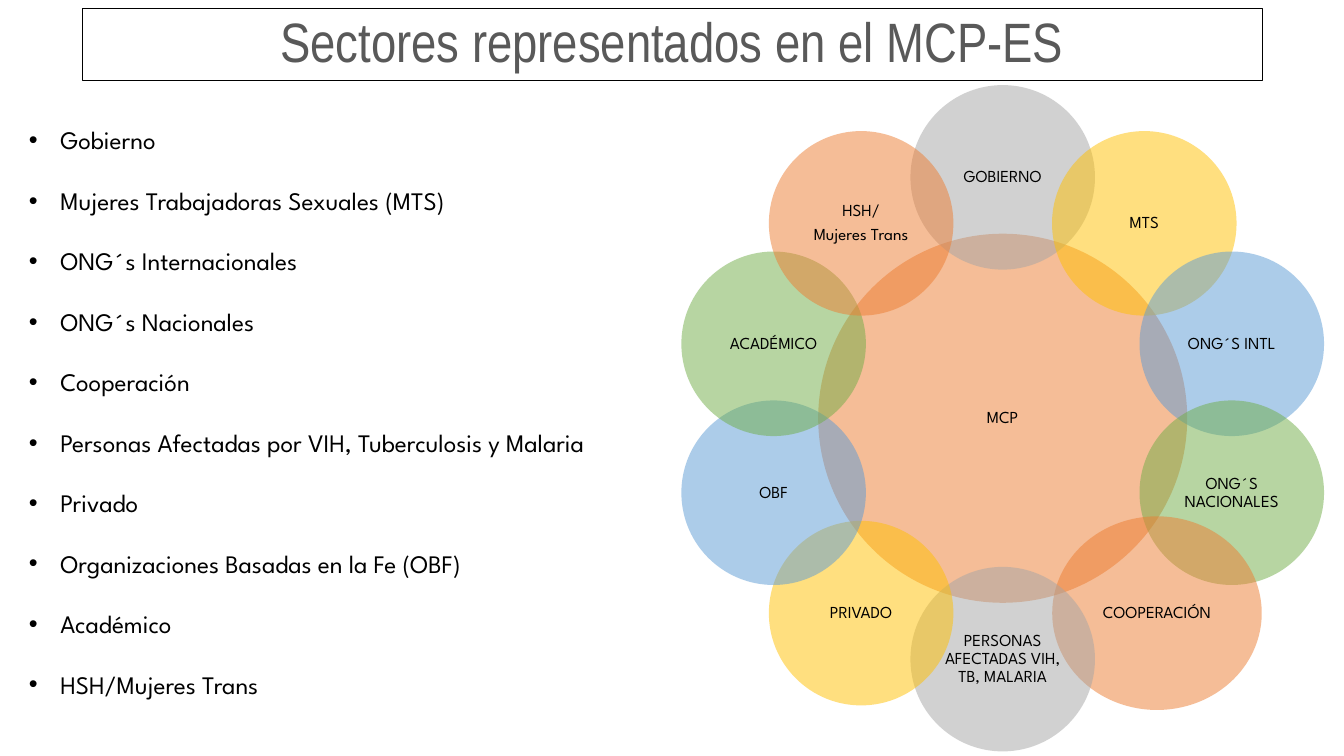
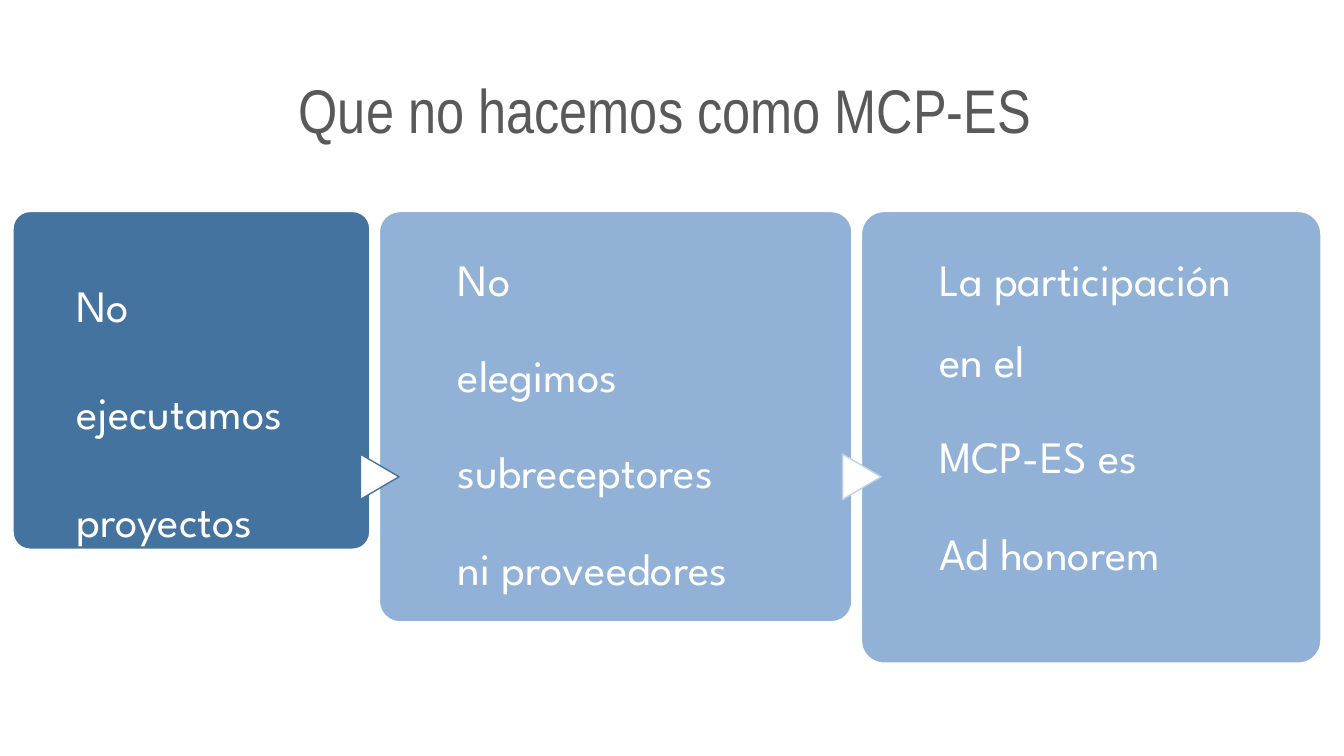
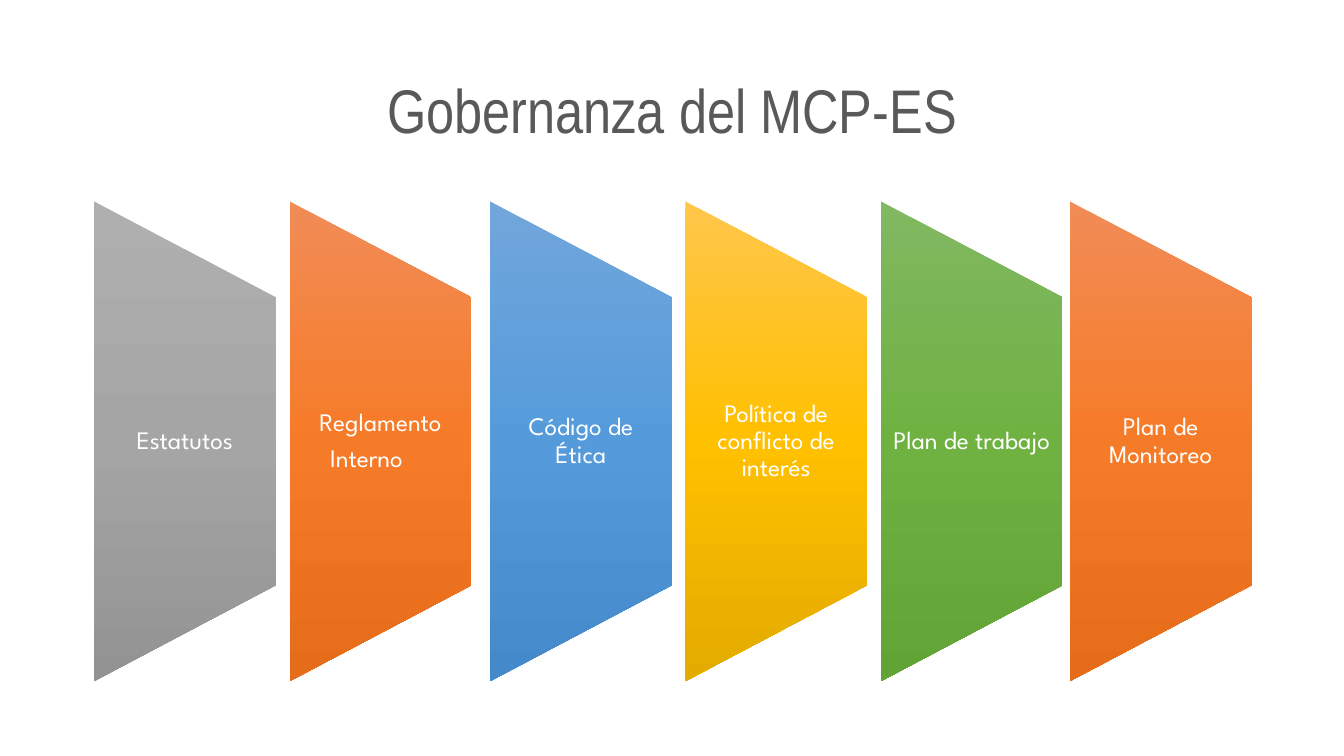
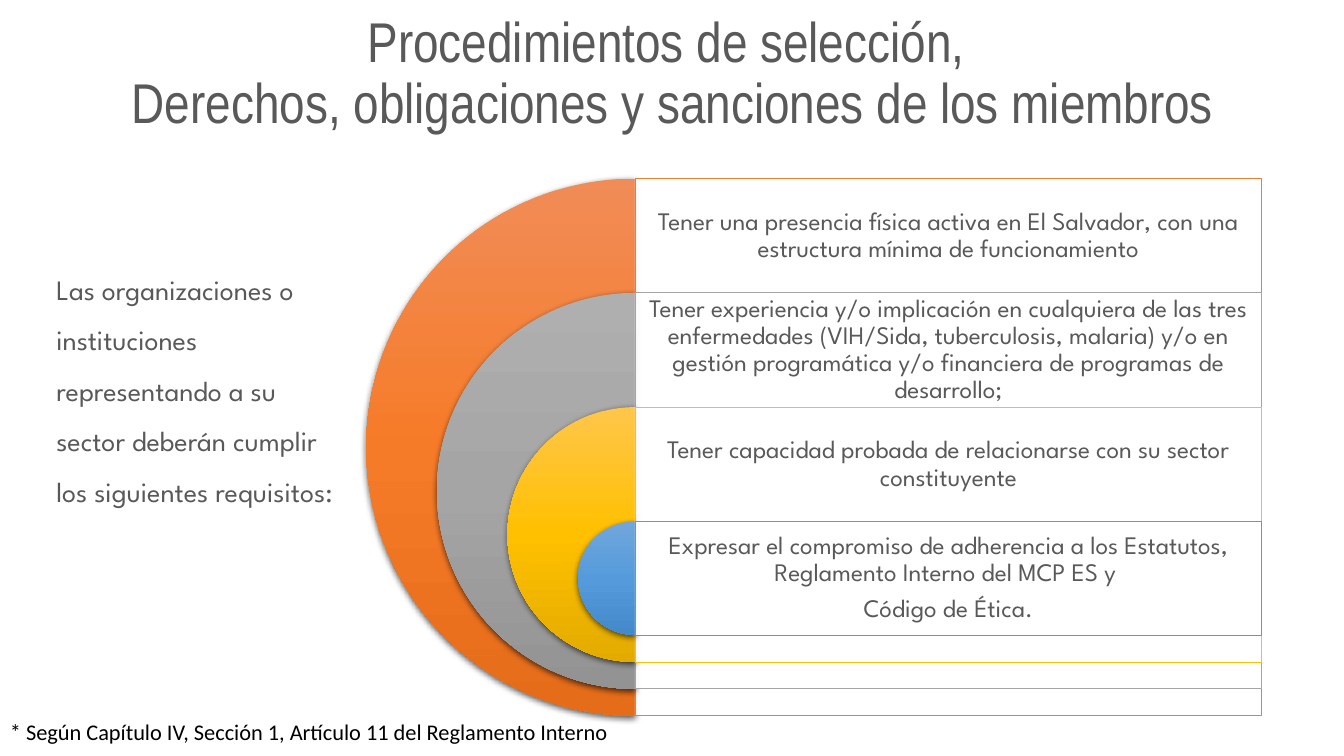
import math
import pptx
import pptx.util
import pptx.dml.color
import pptx.enum.shapes
import pptx.enum.text
import pptx.oxml.ns
from lxml import etree

Cm = pptx.util.Cm
Pt = pptx.util.Pt
qn = pptx.oxml.ns.qn
KIND = pptx.enum.shapes.MSO_SHAPE
ALIGN = pptx.enum.text.PP_ALIGN
ANCHOR = pptx.enum.text.MSO_ANCHOR
FIT = pptx.enum.text.MSO_AUTO_SIZE

COLORS = {
    "black": "000000", "white": "FFFFFF", "text": "595959",
    "orange": "ED7D31", "gray": "A5A5A5", "gold": "FFC000",
    "blue": "5B9BD5", "green": "70AD47",
    "deep": "43739E", "soft": "91B1D6", "pale": "C0D2EA",
}
SHADES = {
    "orange": ("F18C57", "F67B28", "E56C19"),
    "gray": ("AFAFAF", "A5A5A5", "939393"),
    "gold": ("FFC64B", "FFC000", "E3AB00"),
    "blue": ("71A6DB", "559BDB", "448ACA"),
    "green": ("81B861", "6FB242", "62A336"),
}
BODY = "League Spartan"

TITLES = [
    ("Sectores representados en el MCP-ES", (2.06, 0.2, 29.74, 1.83), 39.6),
    ("Que no hacemos como MCP-ES ", (2.34, 1.01, 29.21, 3.68), 44),
    ("Gobernanza del MCP-ES", (2.34, 1.01, 29.21, 3.68), 44),
    ("Procedimientos de selección, \vDerechos, obligaciones y sanciones de los miembros",
     (2.34, 0.05, 29.21, 3.68), 40),
]

SECTORS = [
    "Gobierno", "Mujeres Trabajadoras Sexuales (MTS)", "ONG´s Internacionales",
    "ONG´s Nacionales", "Cooperación",
    "Personas Afectadas por VIH, Tuberculosis y Malaria", "Privado",
    "Organizaciones Basadas en la Fe (OBF)", "Académico", "HSH/Mujeres Trans",
]
PETALS = [
    (["GOBIERNO"], "gray"), (["MTS"], "gold"), (["ONG´S INTL"], "blue"),
    (["ONG´S NACIONALES"], "green"), (["COOPERACIÓN"], "orange"),
    (["PERSONAS AFECTADAS VIH, TB, MALARIA"], "gray"), (["PRIVADO"], "gold"),
    (["OBF"], "blue"), (["ACADÉMICO"], "green"),
    (["HSH/", "Mujeres Trans"], "orange"),
]
WIDE = {4: (0.32, 5.28, 4.88)}

LIMITS = [
    (["No ejecutamos proyectos"], 8.99, 8.51, "deep", 2.0, 1.47, 0.56),
    (["No", "elegimos", "subreceptores", "ni proveedores"],
     11.91, 10.34, "soft", 1.5, 1.83, 0.89),
    (["La participación en el", "MCP-ES es", "Ad honorem"],
     11.58, 11.38, "soft", 1.5, 1.79, 0.83),
]
ARROWS = ["deep", "pale"]

RULES = [
    (["Estatutos"], 2.37, "gray"), (["Reglamento", "Interno\t"], 7.3, "orange"),
    (["Código de Ética"], 12.35, "blue"),
    (["Política de conflicto de interés"], 17.27, "gold"),
    (["Plan de trabajo"], 22.2, "green"), (["Plan de Monitoreo"], 26.96, "orange"),
]

LEAD = ("Las organizaciones o instituciones representando a su sector "
        "deberán cumplir los siguientes requisitos:")
NEEDS = [
    (["Tener una presencia física activa en El Salvador, con una estructura "
      "mínima de funcionamiento"], "orange"),
    (["Tener experiencia y/o implicación en cualquiera de las tres enfermedades "
      "(VIH/Sida, tuberculosis, malaria) y/o en gestión programática y/o "
      "financiera de programas de desarrollo;"], "gray"),
    (["Tener capacidad probada de relacionarse con su sector constituyente"], "gold"),
    (["Expresar el compromiso de adherencia a los Estatutos, Reglamento Interno "
      "del MCP ES y ", "Código de Ética."], "blue"),
]
NOTE = "* Según Capítulo IV, Sección 1, Artículo 11 del Reglamento Interno"


def tint(name):
    return pptx.dml.color.RGBColor.from_string(COLORS[name])


def put(item, values):
    for key, value in values.items():
        setattr(item, key, value)


def pads(left, top, right, bottom):
    return {"margin_left": Cm(left), "margin_top": Cm(top),
            "margin_right": Cm(right), "margin_bottom": Cm(bottom)}


def write(shape, lines, size, color="black", font=BODY, align=ALIGN.CENTER,
          gap=0.9, after=0.35, anchor=ANCHOR.MIDDLE, edges=None):
    frame = shape.text_frame
    put(frame, {"word_wrap": True, "auto_size": FIT.NONE,
                "vertical_anchor": anchor, **(edges or {})})
    for i, line in enumerate(lines):
        para = frame.add_paragraph() if i else frame.paragraphs[0]
        para.text = line
        put(para, {"alignment": align, "line_spacing": gap,
                   "space_before": Pt(0), "space_after": Pt(size * after)})
        for run in para.runs:
            put(run.font, {"size": Pt(size), "name": font})
            run.font.color.rgb = tint(color)


def draw(slide, kind, box, fill=None, alpha=None, shade=None, line=None, width=1):
    shape = slide.shapes.add_shape(kind, *map(Cm, box))
    shape.shadow.inherit = False
    props = shape.element.spPr
    if shade:
        shape.fill.gradient()
        grad = props.find(qn("a:gradFill"))
        grad.clear()
        grad.set("rotWithShape", "0")
        stops = etree.SubElement(grad, qn("a:gsLst"))
        for i, code in enumerate(SHADES[shade]):
            stop = etree.SubElement(stops, qn("a:gs"), pos=str(i * 50000))
            etree.SubElement(stop, qn("a:srgbClr"), val=code)
        etree.SubElement(grad, qn("a:lin"), ang="5400000", scaled="0")
    else:
        shape.fill.solid()
        shape.fill.fore_color.rgb = tint(fill)
    if alpha:
        color = props.find(qn("a:solidFill")).find(qn("a:srgbClr"))
        etree.SubElement(color, qn("a:alpha"), val=str(alpha * 1000))
    if line:
        shape.line.color.rgb = tint(line)
        shape.line.width = Pt(width)
    else:
        shape.line.fill.background()
    return shape


def label(slide, box, lines, size, **style):
    area = slide.shapes.add_textbox(*map(Cm, box))
    write(area, lines, size, **style)
    return area


def shadow(shape):
    effects = shape.element.spPr.find(qn("a:effectLst"))
    outer = etree.SubElement(effects, qn("a:outerShdw"), blurRad="57150",
                             dist="19050", dir="5400000", algn="ctr", rotWithShape="0")
    color = etree.SubElement(outer, qn("a:srgbClr"), val=COLORS["black"])
    etree.SubElement(color, qn("a:alpha"), val="63000")


def bullet(para):
    props = para._p.get_or_add_pPr()
    props.set("marL", str(Cm(0.79)))
    props.set("indent", str(-Cm(0.79)))
    etree.SubElement(props, qn("a:buFont"), typeface="Arial")
    etree.SubElement(props, qn("a:buChar"), char="•")


def start(deck, text, box, size):
    slide = deck.slides.add_slide(deck.slide_layouts[5])
    title = slide.shapes.title
    put(title, dict(zip(("left", "top", "width", "height"), map(Cm, box))))
    write(title, [text], size, color="text", font="Arial Narrow", after=0)
    return slide


def sectors(slide):
    title = slide.shapes.title
    title.line.color.rgb = tint("black")
    title.line.width = Pt(0.25)
    mid, axis, orbit, size = 25.27, 10.54, 6.07, 4.65
    rings = [(["MCP"], "orange", mid, axis, size * 2, size * 2)]
    for i, (lines, color) in enumerate(PETALS):
        turn = 2 * math.pi * i / len(PETALS)
        shift, wide, high = WIDE.get(i, (0, size, size))
        rings.append((lines, color, mid + orbit * math.sin(turn) + shift,
                      axis - orbit * math.cos(turn), wide, high))
    for lines, color, x, y, wide, high in rings:
        ring = draw(slide, KIND.OVAL, (x - wide / 2, y - high / 2, wide, high),
                    color, alpha=50)
        write(ring, lines, 12, edges=pads(0.04, 0.04, 0.04, 0.04))
    area = label(slide, (0.48, 3.02, 17.42, 14.88), SECTORS, 18,
                 align=ALIGN.LEFT, gap=1.0, after=1.2, anchor=ANCHOR.TOP)
    for para in area.text_frame.paragraphs:
        bullet(para)


def limits(slide):
    left, top, space = 0.33, 5.33, 0.24
    for i, (lines, wide, high, color, gap, near, far) in enumerate(LIMITS):
        card = draw(slide, KIND.ROUNDED_RECTANGLE, (left, top, wide, high),
                    color, line="white")
        card.adjustments[0] = 0.05
        write(card, lines, 32, color="white", align=ALIGN.LEFT, gap=gap,
              anchor=ANCHOR.TOP, edges=pads(near, 0.18, far, 0))
        if i:
            arrow = draw(slide, KIND.FLOWCHART_EXTRACT,
                         (left - 0.56, 11.53, 1.14, 0.97), "white",
                         line=ARROWS[i - 1])
            arrow.rotation = 90
        left += wide + space


def rules(slide):
    wide, high, axis, band = 4.58, 12.09, 11.12, 7.26
    for lines, left, color in RULES:
        panel = draw(slide, KIND.FLOWCHART_MANUAL_OPERATION,
                     (left + (wide - high) / 2, axis - wide / 2, high, wide),
                     shade=color)
        panel.rotation = 270
        label(slide, (left, axis - band / 2, wide, band), lines, 18,
              color="white", edges=pads(0.3, 0, 0.3, 0))


def needs(slide):
    label(slide, (1.17, 6.32, 7.8, 9.07), [LEAD], 20, color="text",
          align=ALIGN.LEFT, gap=1.5, after=0, anchor=ANCHOR.TOP)
    axis, wide, band = 16.0, 15.8, 2.88
    for i, (lines, color) in enumerate(NEEDS):
        top, size = 4.5 + band * i, 13.54 - 3.56 * i
        half = draw(slide, KIND.PIE, (axis - size / 2, top, size, size), shade=color)
        half.adjustments[0] = 54
        half.adjustments[1] = 162
        shadow(half)
        row = draw(slide, KIND.RECTANGLE, (axis, top, wide, size), "white",
                   alpha=90, line=color, width=0.5)
        write(row, lines, 18, color="text",
              edges=pads(0.18, 0.18, 0.18, max(size - band, 0) + 0.18))
    label(slide, (0, 17.98, 15.77, 0.94), [NOTE], 16, font="Calibri",
          align=ALIGN.LEFT, gap=1.0, after=0, anchor=ANCHOR.TOP)


def main():
    deck = pptx.Presentation()
    put(deck, {"slide_width": Cm(33.87), "slide_height": Cm(19.05)})
    for title, fill in zip(TITLES, (sectors, limits, rules, needs)):
        fill(start(deck, *title))
    deck.save("out.pptx")


if __name__ == "__main__":
    main()
